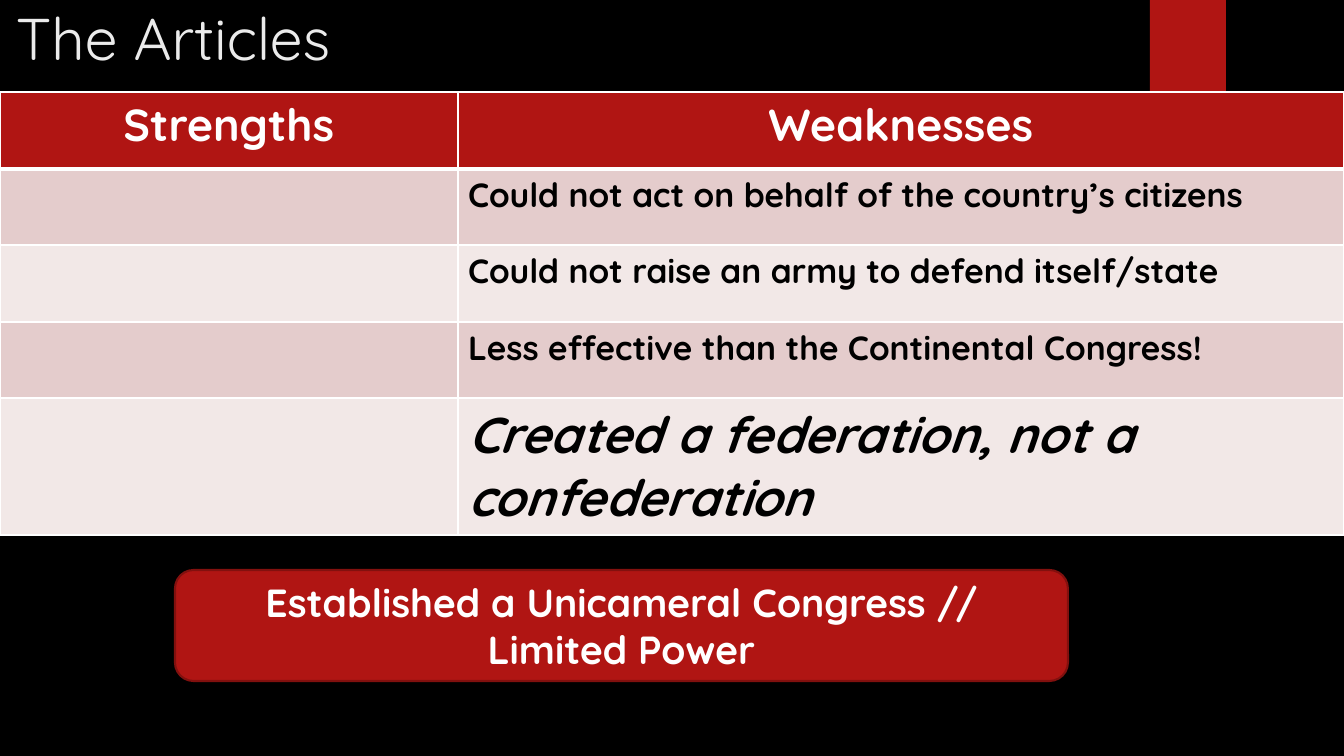
from dataclasses import dataclass

from lxml.etree import SubElement
from pptx import Presentation
from pptx.dml.color import RGBColor
from pptx.enum.shapes import MSO_SHAPE
from pptx.enum.text import MSO_ANCHOR, PP_ALIGN
from pptx.oxml import parse_xml
from pptx.oxml.ns import nsdecls, qn
from pptx.util import Pt

EMU_PER_PX = 12192000 / 1344


@dataclass(frozen=True)
class Theme:
    font: str = "Quicksand"
    background: str = "000000"
    red: str = "B01513"
    dark_red: str = "82100E"
    bands: tuple = ("E4CCCC", "F2E8E7")
    title_color: str = "EBEBEB"
    white: str = "FFFFFF"
    black: str = "000000"
    title: int = 42
    emphasis: int = 36
    header: int = 32
    callout: int = 28
    body: int = 24


THEME = Theme()
HEADERS = ("Strengths", "Weaknesses")
WEAKNESSES = (
    "Could not act on behalf of the country’s citizens",
    "Could not raise an army to defend itself/state",
    "Less effective than the Continental Congress!",
    "Created a federation, not a confederation",
)
COLUMN_WIDTHS = (458, 886)
ROW_HEIGHTS = (77, 76, 77, 76, 137)


def px(length):
    return round(length * EMU_PER_PX)


def emu_box(box):
    return [px(length) for length in box]


def paint(fill, color):
    fill.solid()
    fill.fore_color.rgb = RGBColor.from_string(color)


def write(frame, text, size, color, bold=False, italic=False, align=PP_ALIGN.LEFT):
    """Fill a text frame, one paragraph for each line of text."""
    frame.word_wrap = True
    frame.text = text
    for para in frame.paragraphs:
        para.alignment = align
        for span in para.runs:
            font = span.font
            font.name, font.size = THEME.font, Pt(size)
            font.bold, font.italic = bold, italic
            font.color.rgb = RGBColor.from_string(color)


def add_panel(page, kind, box, color):
    panel = page.shapes.add_shape(kind, *emu_box(box))
    panel.shadow.inherit = False
    paint(panel.fill, color)
    panel.line.fill.background()
    return panel


def set_borders(cell, color, bottom=1):
    """Draw 1 pt cell borders, with a bottom line of its own width."""
    properties = cell._tc.get_or_add_tcPr()
    widths = {"lnL": 1, "lnR": 1, "lnT": 1, "lnB": bottom}
    for place, (side, width) in enumerate(widths.items()):
        line = parse_xml(f'<a:{side} {nsdecls("a")} w="{Pt(width)}"/>')
        solid = SubElement(line, qn("a:solidFill"))
        SubElement(solid, qn("a:srgbClr"), val=color)
        properties.insert(place, line)


def add_heading(page, box):
    left, top, width, height = box
    add_panel(page, MSO_SHAPE.RECTANGLE, (left + 1150, top, 76, 126), THEME.red)
    title = page.shapes.add_textbox(*emu_box((left + 6, top - 3, width - 307, height)))
    write(title.text_frame, "The Articles", THEME.title, THEME.title_color)


def add_comparison(page, box):
    table = page.shapes.add_table(
        len(ROW_HEIGHTS), len(COLUMN_WIDTHS), *emu_box(box)
    ).table
    for column, width in zip(table.columns, COLUMN_WIDTHS):
        column.width = px(width)
    for row, height in zip(table.rows, ROW_HEIGHTS):
        row.height = px(height)

    for column, label in enumerate(HEADERS):
        cell = table.cell(0, column)
        paint(cell.fill, THEME.red)
        set_borders(cell, THEME.white, bottom=3)
        write(cell.text_frame, label, THEME.header, THEME.white,
              bold=True, align=PP_ALIGN.CENTER)

    for row, weakness in enumerate(WEAKNESSES, start=1):
        for column in range(len(HEADERS)):
            cell = table.cell(row, column)
            paint(cell.fill, THEME.bands[(row - 1) % 2])
            set_borders(cell, THEME.white, bottom=1)
        # The top line of the first body row meets the thick header rule.
        is_last = row == len(WEAKNESSES)
        write(table.cell(row, 1).text_frame, weakness,
              THEME.emphasis if is_last else THEME.body, THEME.black,
              bold=True, italic=is_last)


def add_callout(page, box):
    callout = add_panel(page, MSO_SHAPE.ROUNDED_RECTANGLE, box, THEME.red)
    paint(callout.line.fill, THEME.dark_red)
    callout.line.width = Pt(1.5)
    callout.text_frame.vertical_anchor = MSO_ANCHOR.MIDDLE
    write(callout.text_frame, "Established a Unicameral Congress //\nLimited Power",
          THEME.callout, THEME.white, bold=True, align=PP_ALIGN.CENTER)


def main():
    deck = Presentation()
    deck.slide_width, deck.slide_height = px(1344), px(756)
    page = deck.slides.add_slide(deck.slide_layouts[6])
    paint(page.background.fill, THEME.background)
    add_heading(page, (0, 0, 1344, 154))
    add_comparison(page, (0, 92, sum(COLUMN_WIDTHS), sum(ROW_HEIGHTS)))
    add_callout(page, (175, 570, 893, 111))
    deck.save("out.pptx")


if __name__ == "__main__":
    main()
